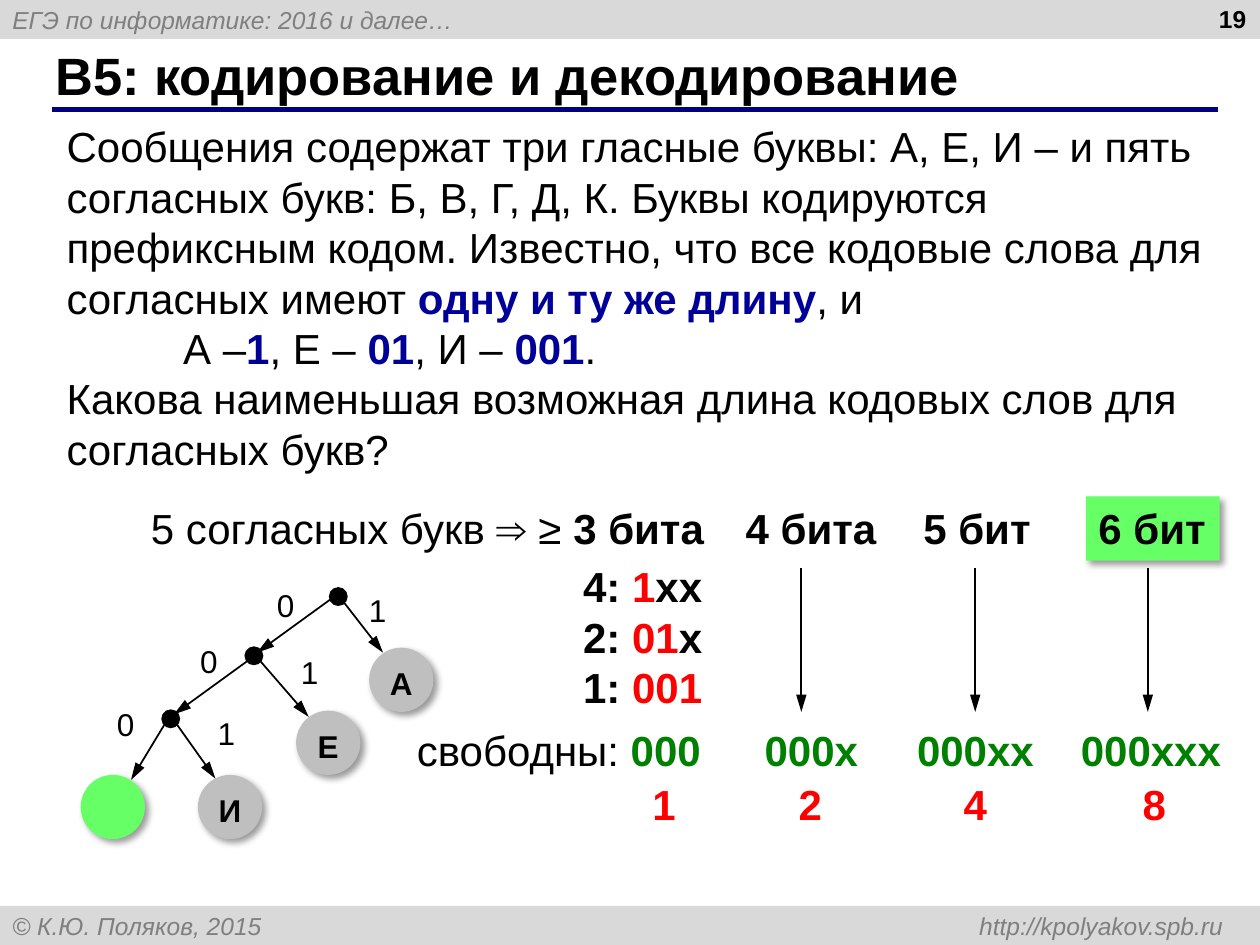
from dataclasses import dataclass
from typing import NamedTuple

from lxml.etree import SubElement
from pptx import Presentation
from pptx.dml.color import RGBColor
from pptx.enum.shapes import MSO_CONNECTOR, MSO_SHAPE
from pptx.enum.text import MSO_ANCHOR, MSO_AUTO_SIZE, PP_ALIGN
from pptx.oxml.ns import qn
from pptx.util import Emu, Inches, Pt

COLS, ROWS = 100, 75
BLACK, GRAY, NAVY, RED = "000000", "7F7F7F", "000099", "FF0000"
GREEN, LIME, SILVER, BAND = "008000", "66FF66", "BFBFBF", "D9D9D9"
BAND_H, LINE_H, LABEL_H, DOT, LEAF = 3.1, 5.1, 4, 1.5, 5.1
HEAD_Y, FREE_Y, COUNT_Y, ARROW_TOP, ARROW_END = 39.4, 57, 61.3, 45.1, 56.5

prs = Presentation()
prs.slide_width, prs.slide_height = Inches(10), Inches(7.5)
s = prs.slides.add_slide(prs.slide_layouts[6])


class Box(NamedTuple):
    x: float
    y: float
    w: float
    h: float


class R(NamedTuple):
    text: str
    color: str = BLACK
    bold: bool = False


@dataclass
class Column:
    head: str
    head_x: float
    head_w: float
    code: str
    code_x: float
    code_w: float
    count: str
    count_x: float
    arrow_x: float


@dataclass
class Edge:
    x1: float
    y1: float
    x2: float
    y2: float
    digit: str
    label_x: float
    label_y: float


COLUMNS = [
    Column("4 бита", 58.2, 12.5, "000x", 59.7, 9.5, "2", 62.4, 63.6),
    Column("5 бит", 72.3, 10.6, "000xx", 71.8, 11.4, "4", 75.5, 77.4),
    Column("6 бит", 86.2, 10.6, "000xxx", 84.8, 13.3, "8", 89.7, 91.1),
]
EDGES = [
    Edge(26.6, 47.3, 20.4, 51.8, "0", 21, 46),
    Edge(26.9, 47.3, 30.4, 51.8, "1", 28.3, 46.4),
    Edge(20, 52.2, 13.8, 56.7, "0", 14.9, 50.5),
    Edge(20.6, 52.4, 24.5, 56.9, "1", 22.9, 51.3),
    Edge(13.6, 56.6, 10.4, 61.9, "0", 8.3, 55.5),
    Edge(13.9, 57.3, 17.1, 61.8, "1", 16.3, 56.2),
]
DOTS = [(26.1, 46.6), (19.4, 51.3), (12.8, 56.3)]
LEAVES = [("А", 29.3, 51.4, SILVER), ("Е", 23.5, 56.4, SILVER),
          ("И", 15.7, 61.5, SILVER), ("", 6.4, 61.5, LIME)]


def col(n: float) -> Emu:
    """Turn grid columns into a length."""
    return Emu(round(prs.slide_width * n / COLS))


def row(n: float) -> Emu:
    """Turn grid rows into a length."""
    return Emu(round(prs.slide_height * n / ROWS))


def place(b: Box) -> tuple[Emu, Emu, Emu, Emu]:
    """Turn a grid box into slide lengths."""
    return col(b.x), row(b.y), col(b.w), row(b.h)


def rgb(value: str) -> RGBColor:
    """Turn a hex string into a colour."""
    return RGBColor.from_string(value)


def write(sp, paras: list[list[R]], size: float = 24, italic: bool = False,
          align=PP_ALIGN.LEFT, anchor=MSO_ANCHOR.TOP, wrap: bool = True):
    """Fill a shape with paragraphs, run by run."""
    tf = sp.text_frame
    tf.word_wrap, tf.vertical_anchor = wrap, anchor
    for i, runs in enumerate(paras):
        p = tf.add_paragraph() if i else tf.paragraphs[0]
        p.alignment = align
        for item in runs:
            r = p.add_run()
            r.text = item.text
            r.font.name, r.font.size = "Arial", Pt(size)
            r.font.bold, r.font.italic = item.bold, italic
            r.font.color.rgb = rgb(item.color)
    return tf


def text(b: Box, paras: list[list[R]], grow: bool = True, **style):
    """Add a text box."""
    tf = write(s.shapes.add_textbox(*place(b)), paras, **style)
    tf.auto_size = MSO_AUTO_SIZE.SHAPE_TO_FIT_TEXT if grow else MSO_AUTO_SIZE.NONE
    return tf


def shape(kind, b: Box, fill: str, shadow: bool = False):
    """Add a filled shape without outline, with a soft shadow on request."""
    sp = s.shapes.add_shape(kind, *place(b))
    sp.shadow.inherit = False
    sp.fill.solid()
    sp.fill.fore_color.rgb = rgb(fill)
    sp.line.fill.background()
    if shadow:
        effects = sp.element.spPr.find(qn("a:effectLst"))
        outer = SubElement(effects, qn("a:outerShdw"), blurRad=str(Pt(4)), dist=str(Pt(3)),
                           dir="2700000", algn="tl", rotWithShape="0")
        clr = SubElement(outer, qn("a:srgbClr"), val=BLACK)
        SubElement(clr, qn("a:alpha"), val="40000")
    return sp


def line(x1: float, y1: float, x2: float, y2: float, color: str = BLACK,
         width: float = 1, arrow: bool = True) -> None:
    """Add a straight line, with an arrowhead at its end by default."""
    cx = s.shapes.add_connector(MSO_CONNECTOR.STRAIGHT, col(x1), row(y1), col(x2), row(y2))
    cx.line.color.rgb, cx.line.width = rgb(color), Pt(width)
    if arrow:
        SubElement(cx.line._get_or_add_ln(), qn("a:tailEnd"), type="triangle", w="med", len="lg")
    SubElement(cx.element.spPr, qn("a:effectLst"))


def draw_frame() -> None:
    """Draw the bands, the title and the page number."""
    bands = [(0, "ЕГЭ по информатике: 2016 и далее…"),
             (ROWS - BAND_H, "© К.Ю. Поляков, 2015 \thttp://kpolyakov.spb.ru")]
    for y, words in bands:
        sp = shape(MSO_SHAPE.RECTANGLE, Box(0, y, COLS, BAND_H), BAND)
        tf = write(sp, [[R(words, GRAY)]], 14, italic=True, anchor=MSO_ANCHOR.MIDDLE)
    tabs = SubElement(tf.paragraphs[0]._p.get_or_add_pPr(), qn("a:tabLst"))
    SubElement(tabs, qn("a:tab"), pos=str(col(96.1)), algn="r")
    line(4.1, 8.7, 96.7, 8.7, "000080", 3, arrow=False)
    text(Box(3.4, 3.3, 91.6, 5.2), [[R("B5: кодирование и декодирование", bold=True)]],
         grow=False, size=30, anchor=MSO_ANCHOR.MIDDLE)
    text(Box(76.6, -0.2, 23.3, 5.2), [[R("19", bold=True)]], grow=False, size=14,
         align=PP_ALIGN.RIGHT)


def draw_task() -> None:
    """Write the task and the three-bit case."""
    tf = text(Box(4.3, 9.1, 92.5, 29.3), [
        [R("Сообщения содержат три гласные буквы: А, Е, И – и пять согласных букв: "
           "Б, В, Г, Д, К. Буквы кодируются префиксным кодом. Известно, что все "
           "кодовые слова для согласных имеют "), R("одну и ту же длину", NAVY, True), R(", и")],
        [R("А –"), R("1", NAVY, True), R(", Е – "), R("01", NAVY, True),
         R(", И – "), R("001", NAVY, True), R(".")],
        [R("Какова наименьшая возможная длина кодовых слов для согласных букв?")]])
    tf.paragraphs[1]._p.get_or_add_pPr().set("indent", str(col(9.25)))
    text(Box(45.3, 44, 12.3, 13.1), [
        [R("4: ", bold=True), R("1", RED, True), R("xx", bold=True)],
        [R("2: ", bold=True), R("01", RED, True), R("x", bold=True)],
        [R("1: ", bold=True), R("001", RED, True)]])
    text(Box(11, HEAD_Y, 49.3, LINE_H), [[R("5 согласных букв ⇒ ≥ "), R("3 бита", bold=True)]])
    text(Box(32.1, FREE_Y, 26.8, LINE_H), [[R("свободны: "), R("000", GREEN, True)]])
    text(Box(50.8, COUNT_Y, 3.9, LINE_H), [[R("1", RED, True)]], wrap=False)


def draw_column(c: Column, answer: bool) -> None:
    """Draw one code length with its free codes and their count."""
    head = Box(c.head_x, HEAD_Y, c.head_w, LINE_H)
    if answer:
        write(shape(MSO_SHAPE.RECTANGLE, head, LIME, shadow=True), [[R(c.head, bold=True)]],
              wrap=False)
    else:
        text(head, [[R(c.head, bold=True)]], wrap=False)
    line(c.arrow_x, ARROW_TOP, c.arrow_x, ARROW_END)
    text(Box(c.code_x, FREE_Y, c.code_w, LINE_H), [[R(c.code, GREEN, True)]], wrap=False)
    text(Box(c.count_x, COUNT_Y, 3.9, LINE_H), [[R(c.count, RED, True)]], wrap=False)


def draw_tree() -> None:
    """Draw the code tree."""
    for x, y in DOTS:
        shape(MSO_SHAPE.OVAL, Box(x, y, DOT, DOT), BLACK)
    for letter, x, y, fill in LEAVES:
        sp = shape(MSO_SHAPE.OVAL, Box(x, y, LEAF, LEAF), fill, shadow=True)
        if letter:
            tf = write(sp, [[R(letter, bold=True)]], 18, align=PP_ALIGN.CENTER,
                       anchor=MSO_ANCHOR.MIDDLE, wrap=False)
            tf.margin_top, tf.margin_bottom = row(0.5), 0
    for e in EDGES:
        line(e.x1, e.y1, e.x2, e.y2)
        text(Box(e.label_x, e.label_y, 3.4, LABEL_H), [[R(e.digit)]], size=18, wrap=False)


def main() -> None:
    """Build and save the slide."""
    draw_frame()
    draw_task()
    for c in COLUMNS:
        draw_column(c, answer=c is COLUMNS[-1])
    draw_tree()
    prs.save("out.pptx")


if __name__ == "__main__":
    main()
